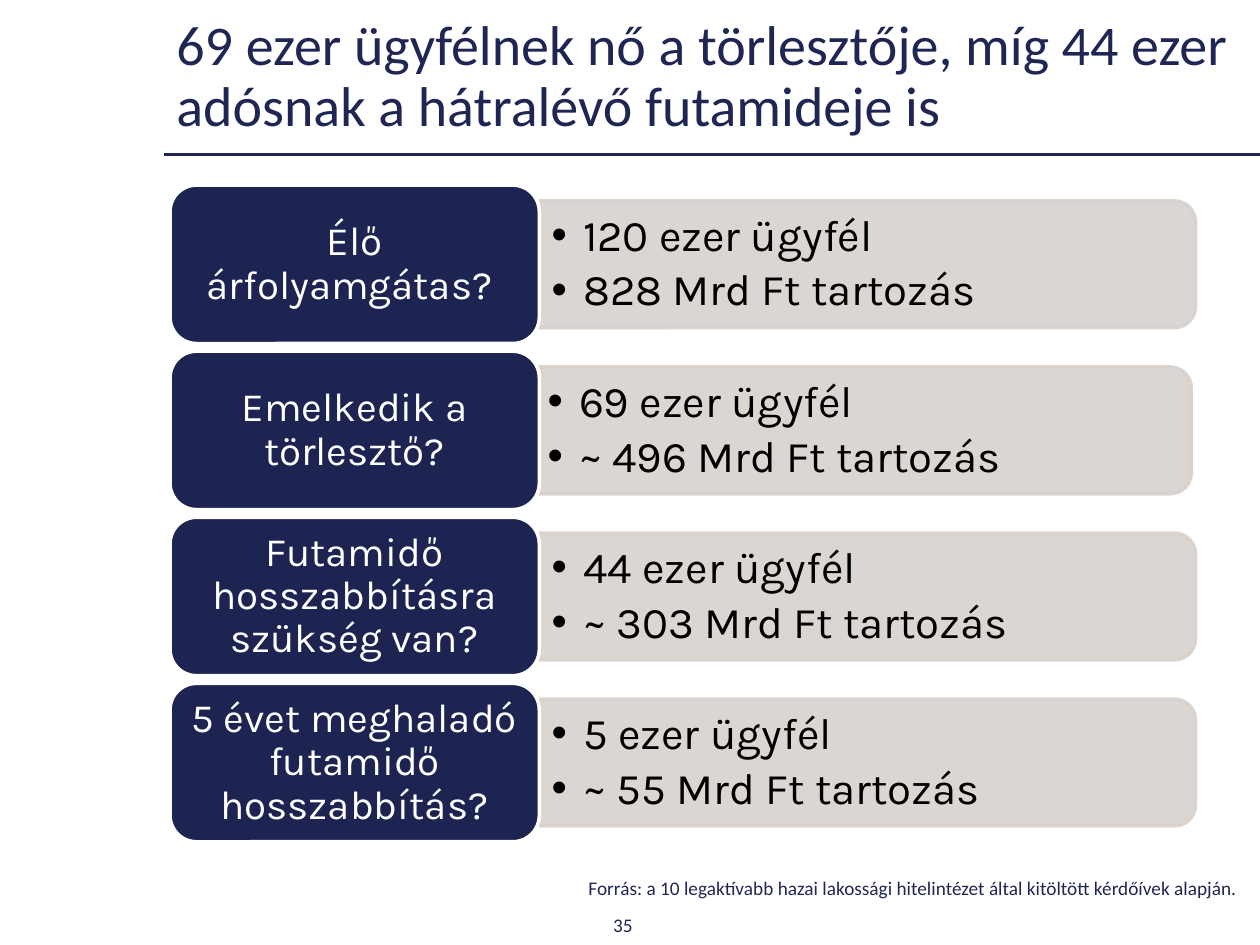
from lxml.etree import SubElement
from pptx import Presentation
from pptx.dml.color import RGBColor
from pptx.enum.shapes import MSO_CONNECTOR, MSO_SHAPE
from pptx.enum.text import MSO_ANCHOR, PP_ALIGN
from pptx.oxml.ns import qn
from pptx.util import Pt

NAVY, TEXT_NAVY, GREY = "1E2452", "202653", "D8D2CD"
WHITE, BLACK = "FFFFFF", "000000"
ROW_PITCH, ROW_HEIGHT = 94.9, 90.5
LABEL_WIDTH, BAR_WIDTH, BAR_HEIGHT = 211, 375, 72.5
# Question, answers, horizontal shift of the answer bar
ROWS = [
    ("Élő árfolyamgátas? ", ["120 ezer ügyfél", "828 Mrd Ft tartozás"], 0),
    ("Emelkedik a törlesztő?", ["69 ezer ügyfél", "~ 496 Mrd Ft tartozás"], -2.4),
    ("Futamidő hosszabbításra szükség van?",
     ["44 ezer ügyfél", "~ 303 Mrd Ft tartozás"], 0),
    ("5 évet meghaladó futamidő hosszabbítás?",
     ["5 ezer ügyfél", "~ 55 Mrd Ft tartozás"], 0),
]


def rgb(color):
    return RGBColor.from_string(color)


def place(left, top, width, height):
    return Pt(left), Pt(top), Pt(width), Pt(height)


def set_alpha(fill_parent, percent):
    color = fill_parent.find(qn("a:solidFill"))[0]
    SubElement(color, qn("a:alpha"), val=str(percent * 1000))


def add_run(paragraph, text, size, font_name, color):
    run = paragraph.add_run()
    run.text = text
    run.font.size = Pt(size)
    run.font.name = font_name
    run.font.color.rgb = rgb(color)


def write_line(frame, text, size, font_name, color, alignment):
    """Fill a frame with one paragraph, centred vertically."""
    frame.word_wrap = True
    frame.vertical_anchor = MSO_ANCHOR.MIDDLE
    paragraph = frame.paragraphs[0]
    paragraph.alignment = alignment
    paragraph.line_spacing = 0.9
    add_run(paragraph, text, size, font_name, color)


def add_panel(slide, kind, box, fill, line):
    shape = slide.shapes.add_shape(kind, *place(*box))
    shape.shadow.inherit = False
    shape.fill.solid()
    shape.fill.fore_color.rgb = rgb(fill)
    shape.line.color.rgb = rgb(line)
    shape.line.width = Pt(2)
    return shape


def add_title(slide, left, top, width, height):
    title = slide.shapes.title
    title.left, title.top, title.width, title.height = place(left, top, width, height)
    write_line(title.text_frame,
               "69 ezer ügyfélnek nő a törlesztője, míg 44 ezer adósnak "
               "a hátralévő futamideje is",
               32, "Calibri", TEXT_NAVY, PP_ALIGN.LEFT)


def add_rule(slide, left, top, right):
    rule = slide.shapes.add_connector(
        MSO_CONNECTOR.STRAIGHT, Pt(left), Pt(top), Pt(right), Pt(top))
    rule.line.color.rgb = rgb(NAVY)
    rule.line.width = Pt(2.25)
    SubElement(rule._element.spPr, qn("a:effectLst"))


def add_answer_bar(slide, left, top, answers):
    # The shape is drawn upright and turned about its centre
    box = (left + (BAR_WIDTH - BAR_HEIGHT) / 2, top - (BAR_WIDTH - BAR_HEIGHT) / 2,
           BAR_HEIGHT, BAR_WIDTH)
    bar = add_panel(slide, MSO_SHAPE.ROUND_2_SAME_RECTANGLE, box, GREY, GREY)
    bar.rotation = 90
    properties = bar._element.spPr
    set_alpha(properties, 90)
    set_alpha(properties.find(qn("a:ln")), 90)

    text_box = slide.shapes.add_textbox(*place(left, top + 3.5, BAR_WIDTH - 3.5, 65.5))
    frame = text_box.text_frame
    frame.word_wrap = True
    frame.vertical_anchor = MSO_ANCHOR.MIDDLE
    for index, answer in enumerate(answers):
        paragraph = frame.add_paragraph() if index else frame.paragraphs[0]
        properties = paragraph._p.get_or_add_pPr()
        properties.set("marL", str(Pt(18)))
        properties.set("indent", str(Pt(-18)))
        SubElement(properties, qn("a:buFont"), typeface="Arial")
        SubElement(properties, qn("a:buChar"), char="•")
        paragraph.line_spacing = 0.9
        if index:
            paragraph.space_before = Pt(4.4)
        add_run(paragraph, answer, 25, "Karla", BLACK)


def add_question_rows(slide, left, top):
    for index, (question, answers, shift) in enumerate(ROWS):
        row_top = top + index * ROW_PITCH
        add_answer_bar(slide, left + LABEL_WIDTH + shift,
                       row_top + (ROW_HEIGHT - BAR_HEIGHT) / 2, answers)
        label = add_panel(slide, MSO_SHAPE.ROUNDED_RECTANGLE,
                          (left, row_top, LABEL_WIDTH, ROW_HEIGHT), NAVY, WHITE)
        write_line(label.text_frame, question, 23, "Karla", WHITE, PP_ALIGN.CENTER)


def add_small_text(slide, box, text, alignment):
    text_box = slide.shapes.add_textbox(*place(*box))
    write_line(text_box.text_frame, text, 11, "Calibri", TEXT_NAVY, alignment)


def main():
    presentation = Presentation()
    presentation.slide_width, presentation.slide_height = Pt(720), Pt(540)
    slide = presentation.slides.add_slide(presentation.slide_layouts[5])
    add_rule(slide, 93.6, 88.3, 720)
    add_title(slide, 93.6, 14.4, 618, 60)
    add_question_rows(slide, 97.2, 105.8)
    add_small_text(slide, (263.5, 497, 450.5, 22),
                   "Forrás: a 10 legaktívabb hazai lakossági hitelintézet "
                   "által kitöltött kérdőívek alapján.", PP_ALIGN.RIGHT)
    add_small_text(slide, (275, 518.5, 162, 21), "35", PP_ALIGN.CENTER)
    presentation.save("out.pptx")


if __name__ == "__main__":
    main()
